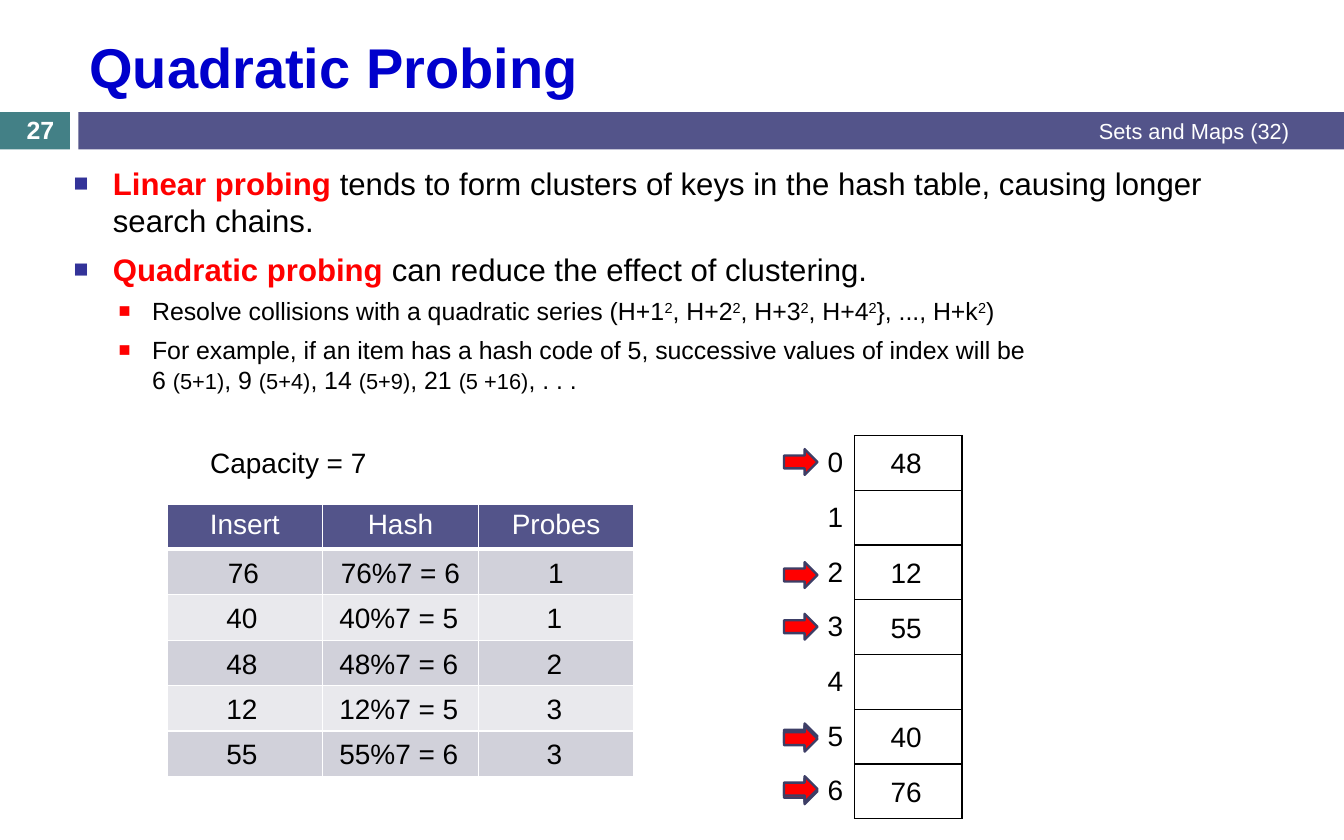
from lxml.etree import SubElement as Sub
from pptx import Presentation
from pptx.dml.color import RGBColor
from pptx.enum.shapes import MSO_SHAPE as Kind
from pptx.enum.text import MSO_ANCHOR as Anchor, PP_ALIGN as Align
from pptx.oxml.ns import qn
from pptx.util import Pt

rgb = RGBColor.from_string


def put(par, text, hue="000000", **form):
    run = par.add_run()
    run.text = text
    for key, val in {"name": "Arial", "size": Pt(18), **form}.items():
        setattr(run.font, key, val)
    run.font.color.rgb = rgb(hue)
    return run


def box(x, y, w, h, align=Align.CENTER, anchor=Anchor.TOP):
    frame = slide.shapes.add_textbox(Pt(x), Pt(y), Pt(w), Pt(h)).text_frame
    form = {"word_wrap": True, "vertical_anchor": anchor}
    for key, val in form.items():
        setattr(frame, key, val)
    frame.paragraphs[0].alignment = align
    return frame.paragraphs[0], frame


deck = Presentation()
deck.slide_width, deck.slide_height = Pt(864), Pt(540)
slide = deck.slides.add_slide(deck.slide_layouts[6])

for x, w, hue in [(0, 45, "438086"), (50.4, 813.6, "53548A")]:
    bar = slide.shapes.add_shape(Kind.RECTANGLE, Pt(x), Pt(72), Pt(w), Pt(24))
    bar.shadow.inherit = False
    bar.fill.solid()
    bar.fill.fore_color.rgb = rgb(hue)
    bar.line.fill.background()

par, _ = box(50.4, 13.7, 785.5, 57.6, Align.LEFT, Anchor.MIDDLE)
put(par, "Quadratic Probing", "0000CC", size=Pt(36), bold=True)
par, _ = box(324, 71.3, 512, 25.2, Align.RIGHT, Anchor.MIDDLE)
put(par, "Sets and Maps (32)", "FFFFFF", size=Pt(14))
par, _ = box(0, 72.7, 51.8, 21.6, Align.CENTER, Anchor.MIDDLE)
put(par, "27", "FFFFFF", size=Pt(16), bold=True)

top = {"level": 0, "space_before": Pt(7)}
sub = {"level": 1, "space_before": Pt(5.5)}
red = {"hue": "FF0000", "bold": True}
sup = {"base": "30000"}
small = {"size": Pt(14)}
points = [
    (top, [("Linear probing ", red),
           ("tends to form clusters of keys in the hash table, "
            "causing longer search chains.", {})]),
    (top, [("Quadratic probing ", red),
           ("can reduce the effect of clustering.", {})]),
    (sub, [("Resolve collisions with a quadratic series (H+1", {}), ("2", sup),
           (", H+2", {}), ("2", sup), (", H+3", {}), ("2", sup),
           (", H+4", {}), ("2", sup), ("}, ..., H+k", {}), ("2", sup),
           (")", {})]),
    (sub, [("For example, if an item has a hash code of 5, "
            "successive values of index will be ", {}), ("\n", {}),
           ("6 ", {}), ("(5+1)", small), (", 9 ", {}), ("(5+4)", small),
           (", 14 ", {}), ("(5+9)", small), (", 21 ", {}),
           ("(5 +16)", small), (", . . .", {})]),
]
par, frame = box(40.3, 102.2, 785.5, 156.2, Align.LEFT)
for n, (form, runs) in enumerate(points):
    par = par if n == 0 else frame.add_paragraph()
    for key, val in form.items():
        setattr(par, key, val)
    left, hang, size, hue = [(25.2, 25.2, 20, "333399"),
                             (50.4, 21.6, 16, "FF0000")][form["level"]]
    props = par._p.get_or_add_pPr()
    props.set("marL", str(Pt(left)))
    props.set("indent", str(-Pt(hang)))
    Sub(Sub(props, qn("a:buClr")), qn("a:srgbClr"), val=hue)
    Sub(props, qn("a:buSzPct"), val="80000")
    Sub(props, qn("a:buFont"), typeface="Arial")
    Sub(props, qn("a:buChar"), char="■")
    for text, form in runs:
        if text == "\n":
            par.add_line_break()
            continue
        look = {"size": Pt(size), **form}
        base = look.pop("base", None)
        run = put(par, text, **look)
        if base:
            run._r.get_or_add_rPr().set("baseline", base)

heads = ["Insert", "Hash", "Probes"]
grids = [
    (107.3, 324, 100.1, 29.2, [heads] + [[""] * 3] * 5, "FFFFFF"),
    (480.2, 280, 69.1, 35.2, [[str(n), ""] for n in range(7)], "000000"),
]
for x, y, w, h, rows, edge in grids:
    wide, high = len(rows[0]), len(rows)
    grid = slide.shapes.add_table(high, wide, Pt(x), Pt(y),
                                  Pt(w * wide), Pt(h * high)).table
    grid.first_row = grid.horz_banding = False
    for col in grid.columns:
        col.width = Pt(w)
    for r, row in enumerate(rows):
        grid.rows[r].height = Pt(h)
        for c, text in enumerate(row):
            cell = grid.cell(r, c)
            probe = wide == 3
            props = cell._tc.get_or_add_tcPr()
            for side in "LRTB" if probe or c else "R":
                thick = 3 if probe and r == 0 and side == "B" else 1
                line = Sub(props, qn("a:ln" + side), w=str(Pt(thick)))
                Sub(Sub(line, qn("a:solidFill")), qn("a:srgbClr"), val=edge)
            if probe:
                cell.fill.solid()
                hue = "53548A" if r == 0 else ["E9E9ED", "D1D1DA"][r % 2]
                cell.fill.fore_color.rgb = rgb(hue)
            else:
                cell.fill.background()
                cell.vertical_anchor = Anchor.MIDDLE
            par = cell.text_frame.paragraphs[0]
            par.alignment = Align.CENTER if probe else Align.RIGHT
            if text:
                put(par, text, "FFFFFF" if probe else "000000")

keys = [(76, 1, 6), (40, 1, 5), (48, 2, 0), (12, 3, 2), (55, 3, 3)]
for n, (key, count, slot) in enumerate(keys):
    y = 353.4 + 29.2 * n
    shift = 1 if n == 0 else 0
    spots = [
        (120.2 + shift, y, 70.6, key),
        (206 + shift, y, 100.8, f"{key}%7 = {key % 7}"),
        (306 + shift, y, 100.8, count),
        (547.2, 283 + 35.2 * slot, 70.6, key),
    ]
    for x, y, w, text in spots:
        par, _ = box(x, y, w, 29)
        put(par, str(text))
par, _ = box(107.3, 283, 156.2, 29)
put(par, "Capacity = 7")

for y in [500.4, 465.1, 466.6, 499, 361.4, 288.7, 394.6]:
    mark = slide.shapes.add_shape(Kind.RIGHT_ARROW, Pt(504), Pt(y),
                                  Pt(21.6), Pt(16.6))
    mark.shadow.inherit = False
    mark.fill.solid()
    mark.fill.fore_color.rgb = rgb("FF0000")
    mark.line.color.rgb = rgb("3D3E66")
    mark.line.width = Pt(1.5)

deck.save("out.pptx")
